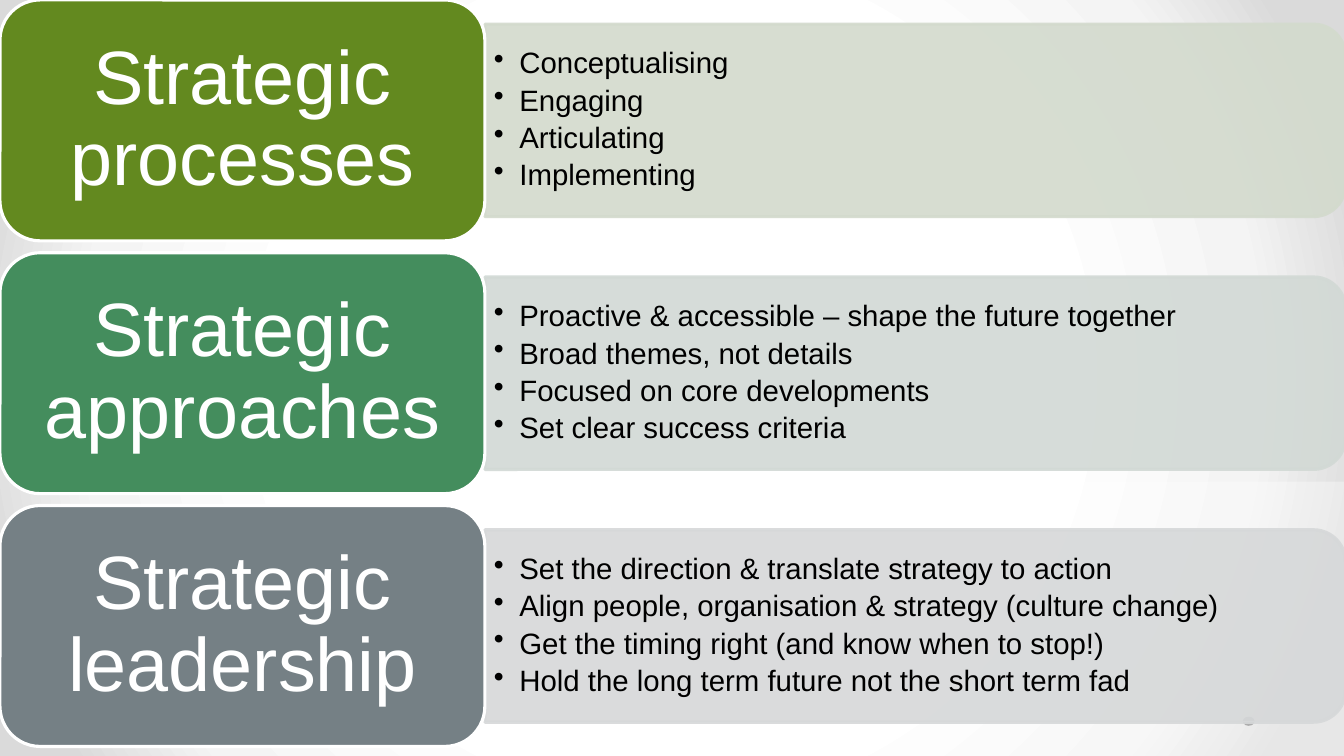
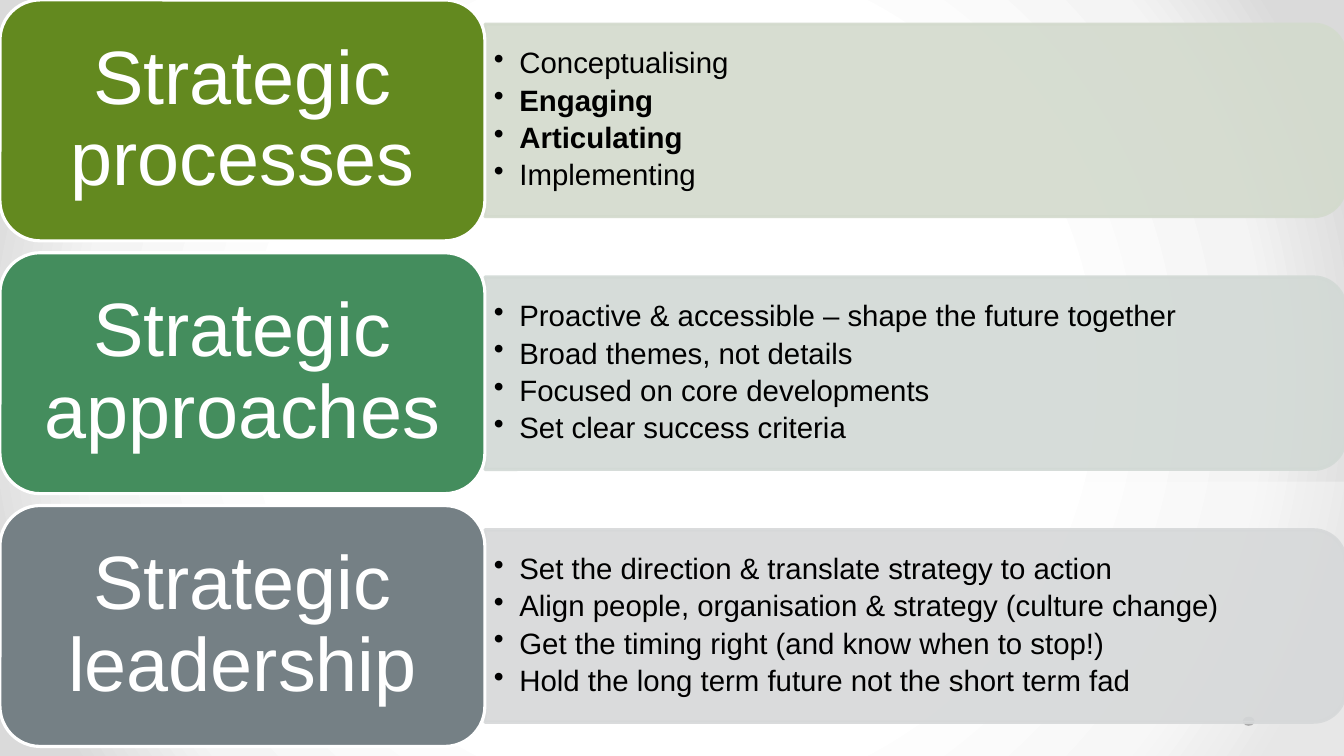
import pptx
import pptx.dml.color
import pptx.enum.shapes
import pptx.enum.text
import pptx.oxml
import pptx.oxml.ns
import pptx.util

Cm = pptx.util.Cm
Pt = pptx.util.Pt
RGBColor = pptx.dml.color.RGBColor
SHAPE = pptx.enum.shapes.MSO_SHAPE
ALIGN = pptx.enum.text.PP_ALIGN
ANCHOR = pptx.enum.text.MSO_ANCHOR

WHITE = RGBColor(0xFF, 0xFF, 0xFF)
BLACK = RGBColor(0x00, 0x00, 0x00)
GREY = RGBColor(0x80, 0x80, 0x80)
OLIVE = RGBColor(0x63, 0x89, 0x1F)
GREEN = RGBColor(0x44, 0x8D, 0x5D)
SLATE = RGBColor(0x75, 0x80, 0x85)
PALE_OLIVE = RGBColor(0xD3, 0xDA, 0xCD)
PALE_GREEN = RGBColor(0xD2, 0xD9, 0xD5)
PALE_SLATE = RGBColor(0xD6, 0xD8, 0xD9)
BACKGROUND_STOPS = [(50, "FFFFFF"), (76, "F4F4F4"), (92, "DADADA")]

ROWS = [
    ("Strategic processes", OLIVE, PALE_OLIVE,
     ["Conceptualising", "Engaging", "Articulating", "Implementing"]),
    ("Strategic approaches", GREEN, PALE_GREEN,
     ["Proactive & accessible – shape the future together",
      "Broad themes, not details",
      "Focused on core developments",
      "Set clear success criteria"]),
    ("Strategic leadership", SLATE, PALE_SLATE,
     ["Set the direction & translate strategy to action",
      "Align people, organisation & strategy (culture change)",
      "Get the timing right (and know when to stop!)",
      "Hold the long term future not the short term fad"]),
]
BOLD_POINTS = [set(), {"Engaging", "Articulating"}]

SLIDE_WIDTH, SLIDE_HEIGHT = Cm(33.87), Cm(19.05)
HEADING_WIDTH, HEADING_HEIGHT = Cm(12.22), Cm(6.07)
ROW_PITCH = Cm(6.37)
PANEL_LENGTH, PANEL_DEPTH = Cm(21.69), Cm(4.85)
POINTS_WIDTH, POINTS_HEIGHT = Cm(21.46), Cm(4.37)
VEIL_LEFT, VEIL_TOP = Cm(18.06), Cm(12.14)
BULLET_INDENT = Cm(0.64)

HEADING_FONT = {"name": "Arial", "size": Pt(54)}
POINT_FONT = {"name": "Arial", "size": Pt(21)}
HEADING_FRAME = {"margin_left": Cm(0.58), "margin_right": Cm(0.58),
                 "margin_top": Cm(0.29), "margin_bottom": Cm(0.29),
                 "vertical_anchor": ANCHOR.MIDDLE, "word_wrap": True}
POINTS_FRAME = {"margin_left": Cm(0.23), "margin_right": Cm(0.23),
                "margin_top": Cm(0.11), "margin_bottom": Cm(0.11),
                "vertical_anchor": ANCHOR.MIDDLE, "word_wrap": True}
HEADING_PARA = {"alignment": ALIGN.CENTER, "line_spacing": 0.9}
POINT_PARA = {"alignment": ALIGN.LEFT, "line_spacing": 0.9, "space_after": Pt(4)}


def apply(target, formats):
    for name, value in formats.items():
        setattr(target, name, value)


def add_shape(page, kind, place, fill, line=None, opacity=100):
    shape = page.shapes.add_shape(kind, *place)
    shape.shadow.inherit = False
    shape.fill.solid()
    shape.fill.fore_color.rgb = fill
    if line is None:
        shape.line.fill.background()
    else:
        shape.line.color.rgb = line
        shape.line.width = Pt(2.25)
    if opacity < 100:
        for colour in shape.element.spPr.iter(pptx.oxml.ns.qn("a:srgbClr")):
            alpha = colour.makeelement(pptx.oxml.ns.qn("a:alpha"), {"val": str(opacity * 1000)})
            colour.append(alpha)
    return shape


def add_span(para, text, font, colour):
    span = para.add_run()
    span.text = text
    apply(span.font, font)
    span.font.color.rgb = colour


def style_master(deck, page):
    master = deck.slide_master
    master.background.fill.gradient()
    gradient = master.element.xpath("./p:cSld/p:bg//a:gradFill")[0]
    stops = "".join(
        f'<a:gs pos="{position * 1000}"><a:srgbClr val="{colour}"/></a:gs>'
        for position, colour in BACKGROUND_STOPS)
    gradient.getparent().replace(gradient, pptx.oxml.parse_xml(
        f'<a:gradFill {pptx.oxml.ns.nsdecls("a")} rotWithShape="1"><a:gsLst>{stops}</a:gsLst>'
        '<a:path path="circle"><a:fillToRect l="50000" t="50000" r="50000" b="50000"/></a:path>'
        '</a:gradFill>'))
    dot = add_shape(page, SHAPE.OVAL, (Cm(31.32), Cm(18.06), Cm(0.3), Cm(0.23)), GREY)
    veil = add_shape(page, SHAPE.RECTANGLE,
                     (VEIL_LEFT, VEIL_TOP, SLIDE_WIDTH - VEIL_LEFT, SLIDE_HEIGHT - VEIL_TOP),
                     WHITE, opacity=36)
    for shape in (dot, veil):
        master.shapes.element.append(shape.element)


def add_points(page, middle, points, bold_points):
    box = page.shapes.add_textbox(HEADING_WIDTH, middle - POINTS_HEIGHT // 2,
                                  POINTS_WIDTH, POINTS_HEIGHT)
    frame = box.text_frame
    apply(frame, POINTS_FRAME)
    for index, point in enumerate(points):
        para = frame.add_paragraph() if index else frame.paragraphs[0]
        properties = para._p.get_or_add_pPr()
        properties.set("marL", str(BULLET_INDENT))
        properties.set("indent", str(-BULLET_INDENT))
        bullet = properties.makeelement(pptx.oxml.ns.qn("a:buChar"), {"char": "•"})
        properties.append(bullet)
        apply(para, POINT_PARA)
        add_span(para, point, {**POINT_FONT, "bold": point in bold_points}, BLACK)


def add_row(page, top, row, bold_points):
    heading, colour, pale, points = row
    middle = top + HEADING_HEIGHT // 2
    panel_left = HEADING_WIDTH + (PANEL_LENGTH - PANEL_DEPTH) // 2
    panel = add_shape(page, SHAPE.ROUND_2_SAME_RECTANGLE,
                      (panel_left, middle - PANEL_LENGTH // 2, PANEL_DEPTH, PANEL_LENGTH),
                      pale, pale, opacity=90)
    panel.rotation = 90
    add_points(page, middle, points, bold_points)
    block = add_shape(page, SHAPE.ROUNDED_RECTANGLE,
                      (0, top, HEADING_WIDTH, HEADING_HEIGHT), colour, WHITE)
    apply(block.text_frame, HEADING_FRAME)
    para = block.text_frame.paragraphs[0]
    apply(para, HEADING_PARA)
    add_span(para, heading, HEADING_FONT, WHITE)


def main():
    deck = pptx.Presentation()
    deck.slide_width, deck.slide_height = SLIDE_WIDTH, SLIDE_HEIGHT
    for number, bold_points in enumerate(BOLD_POINTS):
        page = deck.slides.add_slide(deck.slide_layouts[6])
        if number == 0:
            style_master(deck, page)
        for index, row in enumerate(ROWS):
            add_row(page, index * ROW_PITCH, row, bold_points)
    deck.save("out.pptx")


if __name__ == "__main__":
    main()
